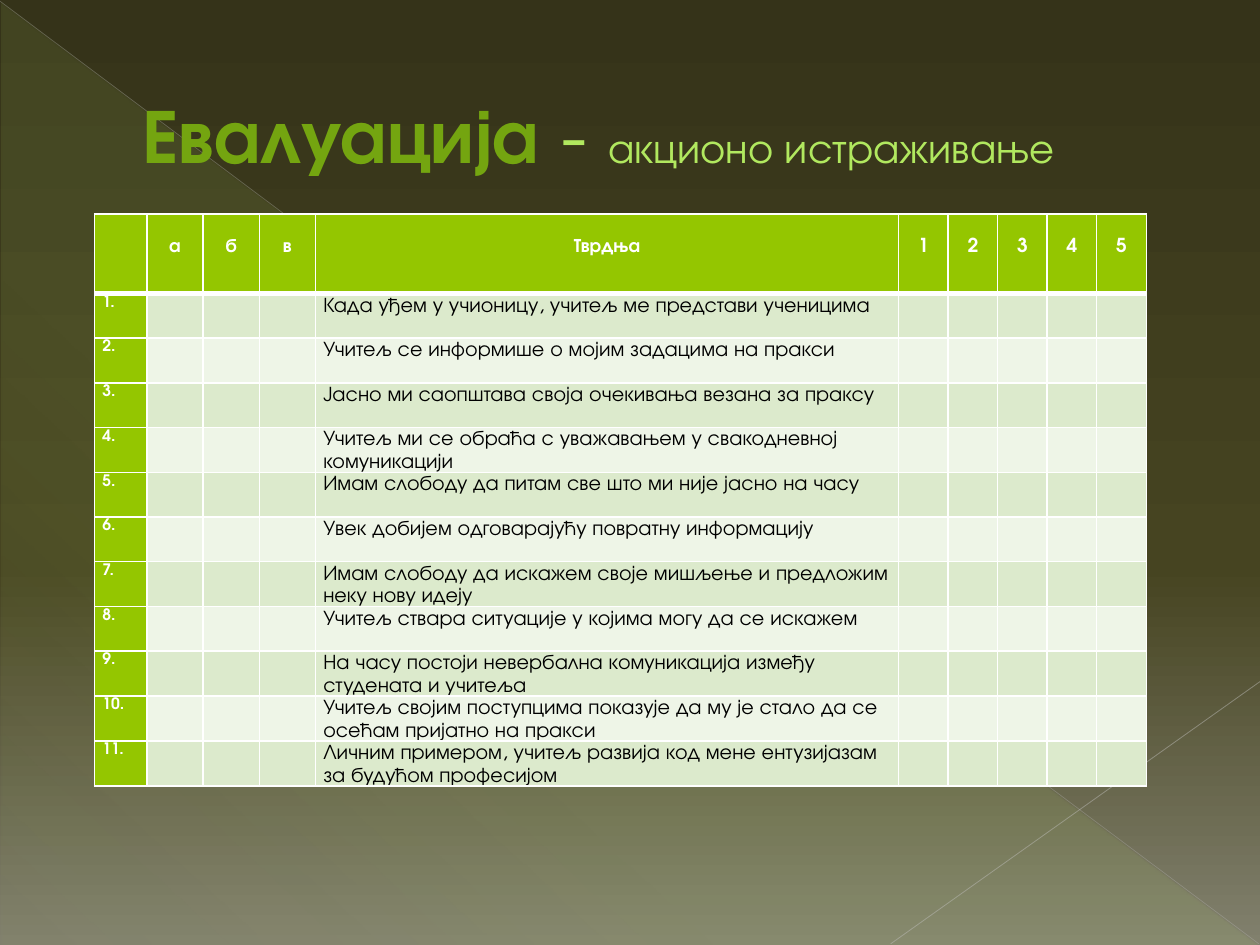
"""Build the evaluation slide with its questionnaire table."""
from dataclasses import dataclass

from lxml import etree
from pptx import Presentation
from pptx import util as u
from pptx.dml.color import RGBColor
from pptx.enum import shapes, text
from pptx.oxml import ns


@dataclass(frozen=True)
class Theme:
    font: str = "TeX Gyre Adventor"
    background: tuple = ((0, "353319", 100), (60, "464421", 100), (100, "81806D", 100))
    glow: tuple = ((0, "CAF278", 10), (70, "CAF278", 8), (100, "CAF278", 1))
    falling_line: str = "B9B9B5"
    rising_line: str = "C1C0BD"
    title: str = "74A510"
    title_outline: str = "678900"
    subtitle: str = "B1E85F"
    accent: str = "94C600"
    bands: tuple = ("DCEACC", "EEF5E7")
    white: str = "FFFFFF"
    black: str = "000000"
    title_size: int = 44
    subtitle_size: int = 24
    header_size: int = 11
    number_size: int = 9
    statement_size: int = 12


def add_child(parent, tag, **attributes):
    child = etree.SubElement(parent, ns.qn(f"a:{tag}"))
    for name, value in attributes.items():
        child.set(name, str(value))
    return child


def add_color(parent, color, alpha=100):
    node = add_child(parent, "srgbClr", val=color)
    if alpha < 100:
        add_child(node, "alpha", val=alpha * 1000)


class SlideBuilder:
    def __init__(self, presentation, theme):
        self.theme = theme
        self.slide = presentation.slides.add_slide(presentation.slide_layouts[5])

    def gradient(self, fill, owner, stops, angle):
        fill.gradient()
        gradient = owner.find(f".//{ns.qn('a:gradFill')}")
        for child in list(gradient):
            gradient.remove(child)
        stop_list = add_child(gradient, "gsLst")
        for position, color, alpha in stops:
            add_color(add_child(stop_list, "gs", pos=position * 1000), color, alpha)
        add_child(gradient, "lin", ang=angle * 60000, scaled=0)

    def background(self):
        self.gradient(self.slide.background.fill, self.slide.element, self.theme.background, 90)

    def triangle(self, left, top, width, height):
        shape = self.slide.shapes.add_shape(
            shapes.MSO_SHAPE.RIGHT_TRIANGLE, u.Pt(left), u.Pt(top), u.Pt(width), u.Pt(height))
        shape.shadow.inherit = False
        shape.line.fill.background()
        self.gradient(shape.fill, shape.element, self.theme.glow, 133)

    def line(self, start, end, color, width, alpha):
        connector = self.slide.shapes.add_connector(
            shapes.MSO_CONNECTOR.STRAIGHT, *map(u.Pt, (*start, *end)))
        connector.line.width = u.Pt(width)
        connector.line.color.rgb = RGBColor.from_string(color)
        fill_color = connector.element.find(f".//{ns.qn('a:ln')}//{ns.qn('a:srgbClr')}")
        add_child(fill_color, "alpha", val=alpha * 1000)
        add_child(connector.element.spPr, "effectLst")

    def style(self, font, size, color, bold=False):
        font.name = self.theme.font
        font.size = u.Pt(size)
        font.bold = bold
        font.color.rgb = RGBColor.from_string(color)

    def title(self, heading, dash, subtitle):
        theme = self.theme
        shape = self.slide.shapes.title
        self.slide.shapes.element.append(shape.element)
        shape.left, shape.top, shape.width, shape.height = map(u.Pt, (36, 21, 648, 110))
        frame = shape.text_frame
        frame.word_wrap = True
        frame.auto_size = text.MSO_AUTO_SIZE.NONE
        frame.vertical_anchor = text.MSO_ANCHOR.MIDDLE
        paragraph = frame.paragraphs[0]
        paragraph.alignment = text.PP_ALIGN.LEFT
        properties = paragraph._p.get_or_add_pPr()
        properties.set("marL", str(u.Pt(38)))
        properties.set("indent", "0")
        for content, size, color, bold in (
                (heading, theme.title_size, theme.title, True),
                (dash, theme.title_size, theme.subtitle, False),
                (subtitle, theme.subtitle_size, theme.subtitle, False)):
            run = paragraph.add_run()
            run.text = content
            self.style(run.font, size, color, bold)
        run_properties = paragraph.runs[0]._r.get_or_add_rPr()
        outline = add_child(run_properties, "ln", w=u.Pt(0.5))
        add_color(add_child(outline, "solidFill"), theme.title_outline)
        run_properties.insert(0, outline)

    def cell(self, cell, fill, content="", size=12, color="000000", bold=False,
             centered=False, margin_top=0, edge_top=1, edge_bottom=1):
        cell.margin_left = cell.margin_right = u.Pt(4.5)
        cell.margin_top, cell.margin_bottom = u.Pt(margin_top), 0
        properties = cell._tc.get_or_add_tcPr()
        for side, width in (("L", 1), ("R", 1), ("T", edge_top), ("B", edge_bottom)):
            border = add_child(properties, f"ln{side}", w=u.Pt(width))
            add_color(add_child(border, "solidFill"), self.theme.white)
        cell.fill.solid()
        cell.fill.fore_color.rgb = RGBColor.from_string(fill)
        if not content:
            return
        cell.text = content
        paragraph = cell.text_frame.paragraphs[0]
        paragraph.line_spacing = 1.15
        paragraph.alignment = text.PP_ALIGN.CENTER if centered else text.PP_ALIGN.LEFT
        for font in (paragraph.font, *(run.font for run in paragraph.runs)):
            self.style(font, size, color, bold)

    def questionnaire(self, left, top, widths, header_height, row_height, headers, statements):
        theme = self.theme
        height = header_height + row_height * len(statements)
        table = self.slide.shapes.add_table(
            len(statements) + 1, len(widths),
            *map(u.Pt, (left, top, sum(widths), height))).table
        for column, width in zip(table.columns, widths):
            column.width = u.Pt(width)
        for index, row in enumerate(table.rows):
            row.height = u.Pt(row_height if index else header_height)
        for column, header in enumerate(headers):
            self.cell(table.cell(0, column), theme.accent, header, theme.header_size,
                      theme.white, True, centered=True, margin_top=12, edge_bottom=3)
        statement_column = headers.index("Тврдња")
        for number, statement in enumerate(statements, 1):
            edge_top = 3 if number == 1 else 1
            band = theme.bands[(number - 1) % 2]
            self.cell(table.cell(number, 0), theme.accent, f"{number}.", theme.number_size,
                      theme.white, True, edge_top=edge_top)
            for column in range(1, len(headers)):
                content = statement if column == statement_column else ""
                self.cell(table.cell(number, column), band, content, theme.statement_size,
                          theme.black, edge_top=edge_top)


HEADERS = ["", "а", "б", "в", "Тврдња", "1", "2", "3", "4", "5"]
STATEMENTS = [
    "Када уђем у учионицу, учитељ ме представи ученицима",
    "Учитељ се информише о мојим задацима на пракси",
    "Јасно ми саопштава своја очекивања везана за праксу",
    "Учитељ ми се обраћа с уважавањем у свакодневној комуникацији",
    "Имам слободу да питам све што ми није јасно на часу",
    "Увек добијем одговарајућу повратну информацију",
    "Имам слободу да искажем своје мишљење и предложим неку нову идеју",
    "Учитељ ствара ситуације у којима могу да се искажем",
    "На часу постоји невербална комуникација између студената и учитеља",
    "Учитељ својим поступцима показује да му је стало да се осећам пријатно на пракси",
    "Личним примером, учитељ развија код мене ентузијазам за будућом професијом",
]


def main():
    presentation = Presentation()
    presentation.slide_width, presentation.slide_height = u.Pt(720), u.Pt(540)
    theme = Theme()
    builder = SlideBuilder(presentation, theme)
    builder.background()
    builder.triangle(0.7, 1.4, 718.6, 538.6)
    builder.line((0, 0.7), (719.3, 539.3), theme.falling_line, 0.39, 35)
    builder.line((720, 389.5), (509, 539.3), theme.rising_line, 0.47, 45)
    builder.title("Евалуација", " - ", "акционо истраживање")
    widths = [30] + [32.1] * 3 + [333.3] + [28.3] * 5
    builder.questionnaire(54, 122.4, widths, 45.4, 25.5, HEADERS, STATEMENTS)
    presentation.save("out.pptx")


if __name__ == "__main__":
    main()
